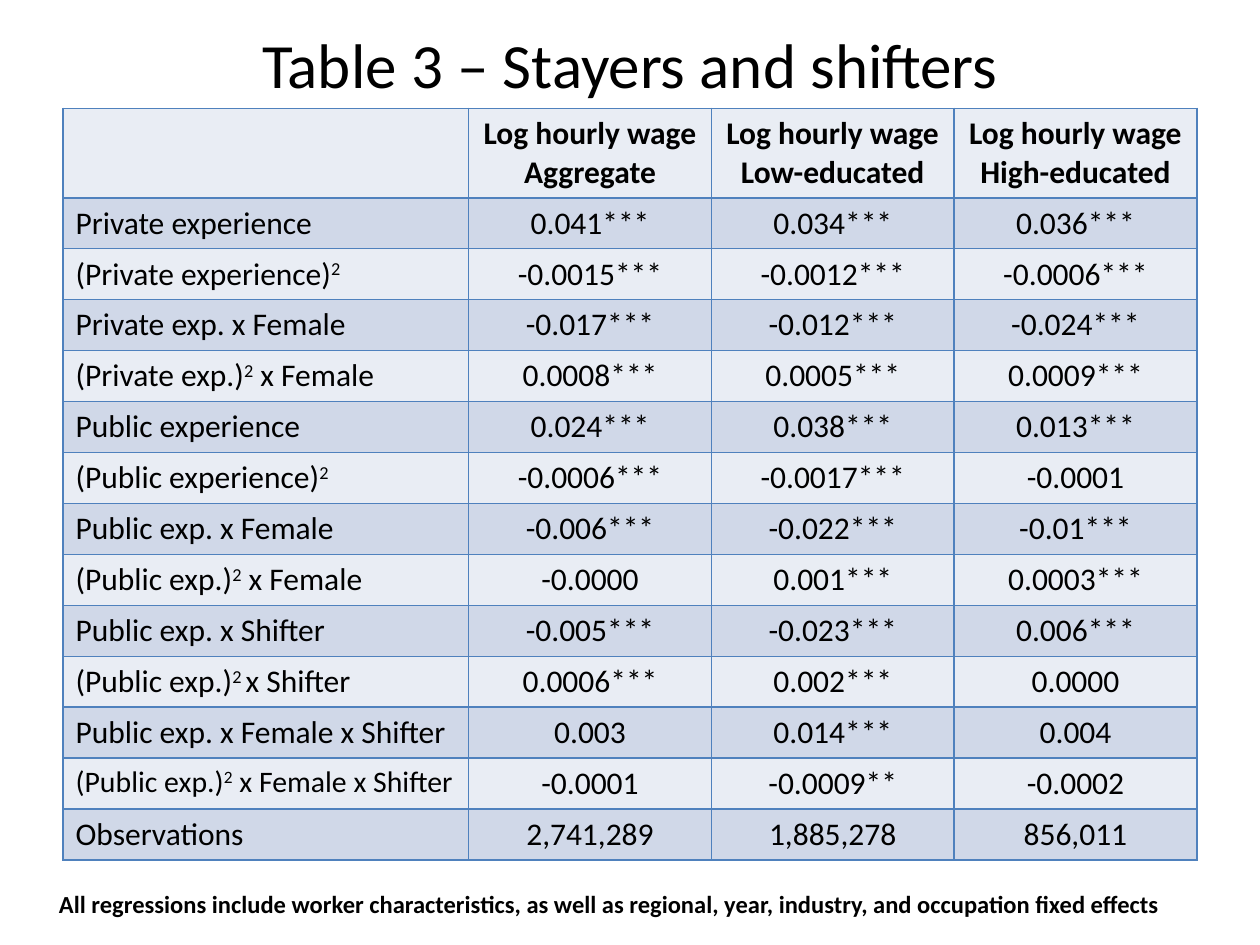
import dataclasses

import lxml.etree
import pptx
import pptx.dml.color
import pptx.enum.text
import pptx.oxml.ns
import pptx.util

Inches = pptx.util.Inches
Pt = pptx.util.Pt
RGB = pptx.dml.color.RGBColor.from_string
ALIGN = pptx.enum.text.PP_ALIGN
ANCHOR = pptx.enum.text.MSO_ANCHOR


@dataclasses.dataclass(frozen=True)
class Theme:
    """Colours, font and type sizes of the slide."""
    font: str = "Calibri"
    ink: str = "000000"
    border: str = "4F81BD"
    bands: tuple = ("E9EDF4", "D0D8E8")
    title: int = 36
    body: int = 18
    tight: int = 17
    note: int = 14


THEME = Theme()
HEADINGS = ["", "Log hourly wage\nAggregate", "Log hourly wage\nLow-educated",
            "Log hourly wage\nHigh-educated"]
LONG_LABEL = "(Public exp.)^2^ x Female x Shifter"
RESULTS = [
    ["Private experience", "0.041***", "0.034***", "0.036***"],
    ["(Private experience)^2", "-0.0015***", "-0.0012***", "-0.0006***"],
    ["Private exp. x Female", "-0.017***", "-0.012***", "-0.024***"],
    ["(Private exp.)^2^ x Female", "0.0008***", "0.0005***", "0.0009***"],
    ["Public experience", "0.024***", "0.038***", "0.013***"],
    ["(Public experience)^2", "-0.0006***", "-0.0017***", "-0.0001"],
    ["Public exp. x Female", "-0.006***", "-0.022***", "-0.01***"],
    ["(Public exp.)^2^ x Female", "-0.0000", "0.001***", "0.0003***"],
    ["Public exp. x Shifter", "-0.005***", "-0.023***", "0.006***"],
    ["(Public exp.)^2 ^x Shifter", "0.0006***", "0.002***", "0.0000"],
    ["Public exp. x Female x Shifter", "0.003", "0.014***", "0.004"],
    [LONG_LABEL, "-0.0001", "-0.0009**", "-0.0002"],
    ["Observations", "2,741,289", "1,885,278", "856,011"],
]


def set_all(obj, formats):
    """Set every attribute named in a dict of format values."""
    for name, value in formats.items():
        setattr(obj, name, value)


def write(tf, text, size, bold=False, align=ALIGN.LEFT):
    """Write lines of text, raising the parts between carets."""
    for i, line in enumerate(text.split("\n")):
        p = tf.paragraphs[0] if i == 0 else tf.add_paragraph()
        p.alignment = align
        for j, part in enumerate(line.split("^")):
            r = p.add_run()
            r.text = part
            set_all(r.font, {"name": THEME.font, "size": Pt(size), "bold": bold})
            r.font.color.rgb = RGB(THEME.ink)
            if j % 2:
                r._r.get_or_add_rPr().set("baseline", "30000")


def add_text(s, box, text, size, **formats):
    """Place a wrapped, vertically centred text box."""
    tf = s.shapes.add_textbox(*map(Inches, box)).text_frame
    set_all(tf, {"word_wrap": True, "vertical_anchor": ANCHOR.MIDDLE})
    write(tf, text, size, **formats)


def style_cell(cell, fill):
    """Give a cell its fill and four thin borders."""
    tcPr = cell._tc.get_or_add_tcPr()
    qn = pptx.oxml.ns.qn
    for side in ("lnL", "lnR", "lnT", "lnB"):
        ln = lxml.etree.SubElement(tcPr, qn(f"a:{side}"), w=str(Pt(1)))
        solid = lxml.etree.SubElement(ln, qn("a:solidFill"))
        lxml.etree.SubElement(solid, qn("a:srgbClr"), val=THEME.border)
    cell.fill.solid()
    cell.fill.fore_color.rgb = RGB(fill)


def add_results(s, box, label_width=3.22, header_height=0.71):
    """Place the regression table with its heading row."""
    rows = [HEADINGS] + RESULTS
    width, height = box[2:]
    table = s.shapes.add_table(len(rows), len(HEADINGS), *map(Inches, box)).table
    set_all(table, {"first_row": False, "horz_banding": False})
    value_width = (width - label_width) / (len(HEADINGS) - 1)
    row_height = (height - header_height) / len(RESULTS)
    for i, column in enumerate(table.columns):
        column.width = Inches(value_width if i else label_width)
    for i, values in enumerate(rows):
        table.rows[i].height = Inches(row_height if i else header_height)
        for j, text in enumerate(values):
            cell = table.cell(i, j)
            style_cell(cell, THEME.bands[i % 2])
            size = THEME.tight if text == LONG_LABEL else THEME.body
            write(cell.text_frame, text, size, bold=i == 0,
                  align=ALIGN.CENTER if j else ALIGN.LEFT)


def main():
    """Build and save the slide."""
    prs = pptx.Presentation()
    set_all(prs, {"slide_width": Inches(10), "slide_height": Inches(7.5)})
    s = prs.slides.add_slide(prs.slide_layouts[6])
    add_text(s, (0.5, 0.19, 9, 0.62), "Table 3 – Stayers and shifters",
             THEME.title, align=ALIGN.CENTER)
    add_results(s, (0.5, 0.86, 9, 5.97))
    add_text(s, (0.37, 7, 9.13, 0.34),
             "All regressions include worker characteristics, as well as "
             "regional, year, industry, and occupation fixed effects",
             THEME.note, bold=True)
    prs.save("out.pptx")


if __name__ == "__main__":
    main()
